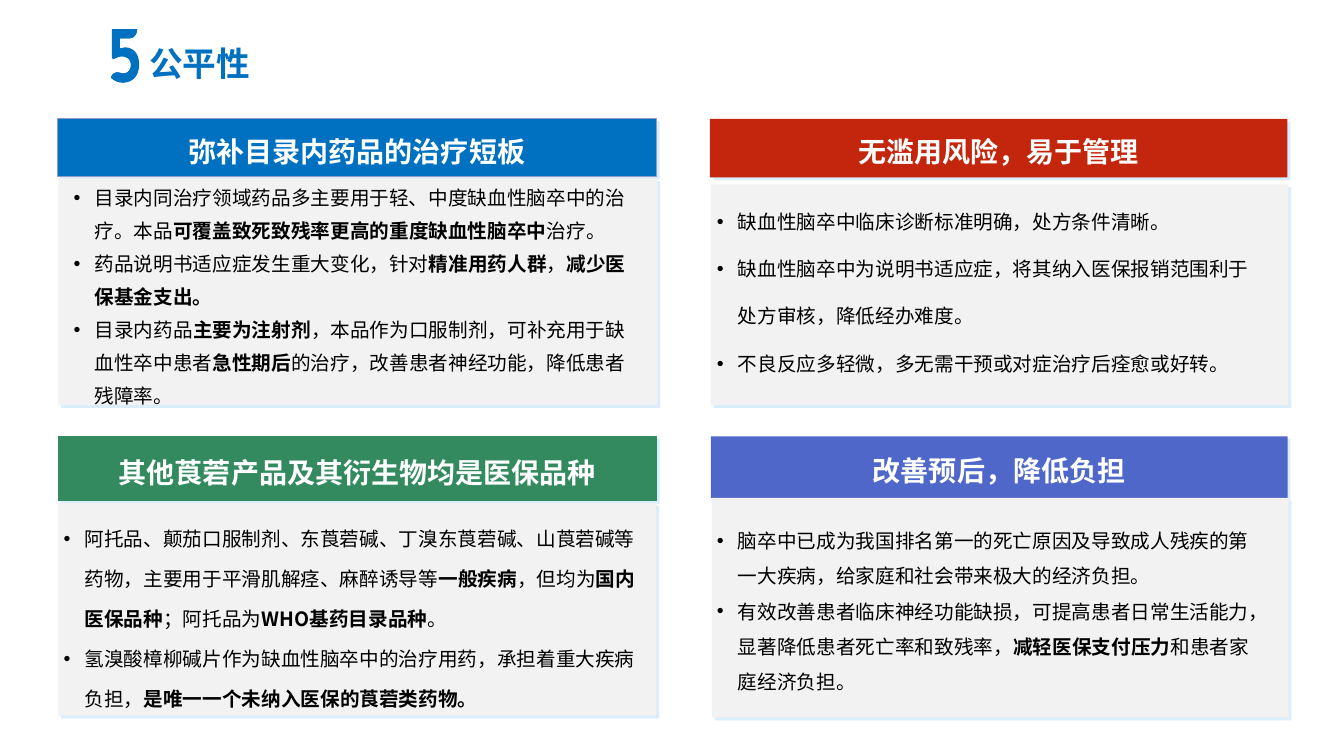
import pptx
import pptx.dml.color
import pptx.enum.shapes
import pptx.enum.text
import pptx.oxml
import pptx.oxml.ns
import pptx.util
from pptx.util import Inches

CJK_FONT = "Noto Sans CJK SC"
BLUE = "0070C0"
NAMESPACE = pptx.oxml.ns.nsdecls("a")

CARDS = [
    {
        "title": "改善预后，降低负担", "color": "4E67C8", "line": None,
        "header": (7.05, 4.33, 5.72, 0.61), "panel": (7.06, 4.94, 5.72, 2.18),
        "body": (7.11, 4.97, 5.67, 2.11), "spacing": 1.5, "before": 0,
        "items": [
            "脑卒中已成为我国排名第一的死亡原因及导致成人残疾的第一大疾病，给家庭和社会带来极大的经济负担。",
            "有效改善患者临床神经功能缺损，可提高患者日常生活能力，显著降低患者死亡率和致残率，**减轻医保支付压力**和患者家庭经济负担。",
        ],
    },
    {
        "title": "其他莨菪产品及其衍生物均是医保品种", "color": "338A5F", "line": "338A5F",
        "header": (0.58, 4.33, 5.93, 0.64), "panel": (0.58, 4.99, 5.93, 2.11),
        "body": (0.63, 4.9, 5.88, 2.22), "spacing": 1.7, "before": 0.2,
        "items": [
            "阿托品、颠茄口服制剂、东莨菪碱、丁溴东莨菪碱、山莨菪碱等药物，主要用于平滑肌解痉、麻醉诱导等**一般疾病**，但均为**国内医保品种**；阿托品为**WHO基药目录品种**。",
            "氢溴酸樟柳碱片作为缺血性脑卒中的治疗用药，承担着重大疾病负担，**是唯一一个未纳入医保的莨菪类药物。**",
        ],
    },
    {
        "title": "无滥用风险，易于管理", "color": "C3260C", "line": None,
        "header": (7.04, 1.18, 5.73, 0.58), "panel": (7.05, 1.83, 5.73, 2.19),
        "body": (7.11, 1.69, 5.67, 2.07), "spacing": 2.0, "before": 0.2,
        "items": [
            "缺血性脑卒中临床诊断标准明确，处方条件清晰。",
            "缺血性脑卒中为说明书适应症，将其纳入医保报销范围利于处方审核，降低经办难度。",
            "不良反应多轻微，多无需干预或对症治疗后痊愈或好转。",
        ],
    },
    {
        "title": "弥补目录内药品的治疗短板", "color": BLUE, "line": "919ACA",
        "header": (0.57, 1.18, 5.94, 0.57), "panel": (0.58, 1.77, 5.94, 2.25),
        "body": (0.73, 1.59, 5.7, 2.07), "spacing": 1.4, "before": 0.2,
        "items": [
            "目录内同治疗领域药品多主要用于轻、中度缺血性脑卒中的治疗。本品**可覆盖致死致残率更高的重度缺血性脑卒中**治疗。",
            "药品说明书适应症发生重大变化，针对**精准用药人群**，**减少医保基金支出。**",
            "目录内药品**主要为注射剂**，本品作为口服制剂，可补充用于缺血性卒中患者**急性期后**的治疗，改善患者神经功能，降低患者残障率。",
        ],
    },
]

DIGIT_STROKES = [
    ((1.1, 0.29, 0.29, 0.53), [
        (1.1, 0.77), (1.11, 0.73, 1.15, 0.71, 1.18, 0.72),
        (1.19, 0.72, 1.21, 0.73, 1.22, 0.73), (1.27, 0.73, 1.3, 0.69, 1.3, 0.64),
        (1.3, 0.59, 1.26, 0.56, 1.21, 0.56), (1.19, 0.56, 1.16, 0.57, 1.14, 0.58),
        (1.13, 0.6, 1.11, 0.59, 1.11, 0.57), (1.11, 0.29), (1.36, 0.29),
        (1.36, 0.34, 1.33, 0.38, 1.29, 0.38), (1.19, 0.38), (1.19, 0.48),
        (1.21, 0.47, 1.22, 0.47, 1.24, 0.47), (1.32, 0.47, 1.38, 0.53, 1.38, 0.64),
        (1.38, 0.75, 1.32, 0.82, 1.22, 0.82), (1.17, 0.82, 1.13, 0.8, 1.1, 0.77),
    ]),
    ((1.1, 0.56, 0.23, 0.26), [
        (1.22, 0.56), (1.21, 0.56), (1.26, 0.56, 1.3, 0.59, 1.3, 0.64),
        (1.3, 0.69, 1.28, 0.73, 1.22, 0.73), (1.21, 0.73, 1.19, 0.72, 1.18, 0.72),
        (1.15, 0.71, 1.11, 0.73, 1.1, 0.77), (1.13, 0.8, 1.17, 0.82, 1.22, 0.82),
        (1.23, 0.82), (1.36, 0.81, 1.36, 0.56, 1.23, 0.56),
    ]),
    ((1.19, 0.29, 0.17, 0.1), [
        (1.19, 0.38), (1.29, 0.38), (1.33, 0.38, 1.36, 0.34, 1.36, 0.29),
        (1.27, 0.29), (1.23, 0.29, 1.19, 0.33, 1.19, 0.38),
    ]),
]


def rgb(color):
    return pptx.dml.color.RGBColor.from_string(color)


def place(box):
    return [Inches(value) for value in box]


def add_text(paragraph, text, size, color, font=CJK_FONT, bold=False, spacing=1.0,
             before=0, align=None, bullet=False):
    paragraph.line_spacing = spacing
    paragraph.space_before = pptx.util.Pt(before)
    paragraph.alignment = align
    if bullet:
        properties = paragraph._p.get_or_add_pPr()
        properties.set("marL", str(Inches(0.21)))
        properties.set("indent", str(-Inches(0.21)))
        properties.append(pptx.oxml.parse_xml(f'<a:buFont {NAMESPACE} typeface="Arial"/>'))
        properties.append(pptx.oxml.parse_xml(f'<a:buChar {NAMESPACE} char="•"/>'))
    for index, part in enumerate(text.split("**")):
        if not part:
            continue
        run = paragraph.add_run()
        run.text = part
        run.font.size = pptx.util.Pt(size)
        run.font.name = font
        run.font.bold = bold or index % 2 == 1
        run.font.color.rgb = rgb(color)
        run.font._element.find(pptx.oxml.ns.qn("a:latin")).addnext(
            pptx.oxml.parse_xml(f'<a:ea {NAMESPACE} typeface="{CJK_FONT}"/>'))


def add_panel(shapes, box, fill, line=None):
    panel = shapes.add_shape(pptx.enum.shapes.MSO_SHAPE.RECTANGLE, *place(box))
    panel.fill.solid()
    panel.fill.fore_color.rgb = rgb(fill)
    if line:
        panel.line.color.rgb = rgb(line)
        panel.line.width = pptx.util.Pt(0.75)
    else:
        panel.line.fill.background()
    panel._element.spPr.append(pptx.oxml.parse_xml(
        f'<a:effectLst {NAMESPACE}><a:outerShdw blurRad="0" dist="{pptx.util.Pt(2.8)}" '
        'dir="2700000" algn="tl" rotWithShape="0"><a:srgbClr val="B4DCFA">'
        '<a:alpha val="50000"/></a:srgbClr></a:outerShdw></a:effectLst>'))
    return panel


def add_card(slide, card):
    shapes = slide.shapes.add_group_shape().shapes
    header = add_panel(shapes, card["header"], card["color"], card["line"])
    header.text_frame.word_wrap = False
    header.text_frame.vertical_anchor = pptx.enum.text.MSO_ANCHOR.MIDDLE
    add_text(header.text_frame.paragraphs[0], card["title"], size=20, color="FFFFFF",
             bold=True, spacing=1.2, align=pptx.enum.text.PP_ALIGN.CENTER)
    add_panel(shapes, card["panel"], "F2F2F2")
    frame = shapes.add_textbox(*place(card["body"])).text_frame
    frame.word_wrap = True
    frame.margin_left, frame.margin_top, frame.margin_right, frame.margin_bottom = place(
        (0, 0.16, 0.21, 0.1))
    for index, item in enumerate(card["items"]):
        paragraph = frame.add_paragraph() if index else frame.paragraphs[0]
        add_text(paragraph, item, size=14, color="000000", spacing=card["spacing"],
                 before=card["before"], bullet=True)


def add_stroke(shapes, box, segments):
    left, top, width, height = place(box)
    builder = shapes.build_freeform(left, top)
    builder.add_line_segments([(left + width, top), (left + width, top + height),
                               (left, top + height)])
    stroke = builder.convert_to_shape()
    outline = next(stroke._element.iter(pptx.oxml.ns.qn("a:path")))
    for child in list(outline):
        outline.remove(child)
    for index, segment in enumerate(segments):
        tag = "moveTo" if index == 0 else "lnTo" if len(segment) == 2 else "cubicBezTo"
        points = "".join(f'<a:pt x="{Inches(x) - left}" y="{Inches(y) - top}"/>'
                         for x, y in zip(segment[::2], segment[1::2]))
        outline.append(pptx.oxml.parse_xml(f"<a:{tag} {NAMESPACE}>{points}</a:{tag}>"))
    outline.append(pptx.oxml.parse_xml(f"<a:close {NAMESPACE}/>"))
    stroke.shadow.inherit = False
    stroke.fill.solid()
    stroke.fill.fore_color.rgb = rgb(BLUE)
    stroke.line.fill.background()


def add_heading(slide, text):
    frame = slide.shapes.add_textbox(*place((1.38, 0.33, 2.33, 0.65))).text_frame
    frame.word_wrap = True
    frame.vertical_anchor = pptx.enum.text.MSO_ANCHOR.MIDDLE
    add_text(frame.paragraphs[0], text, size=24, color=BLUE, font="Arial", bold=True,
             spacing=0.9)


def main():
    presentation = pptx.Presentation()
    presentation.slide_width, presentation.slide_height = place((13.33, 7.5))
    slide = presentation.slides.add_slide(presentation.slide_layouts[6])
    for card in CARDS:
        add_card(slide, card)
    add_heading(slide, "公平性")
    digit = slide.shapes.add_group_shape()
    for box, segments in DIGIT_STROKES:
        add_stroke(digit.shapes, box, segments)
    presentation.save("out.pptx")


if __name__ == "__main__":
    main()
